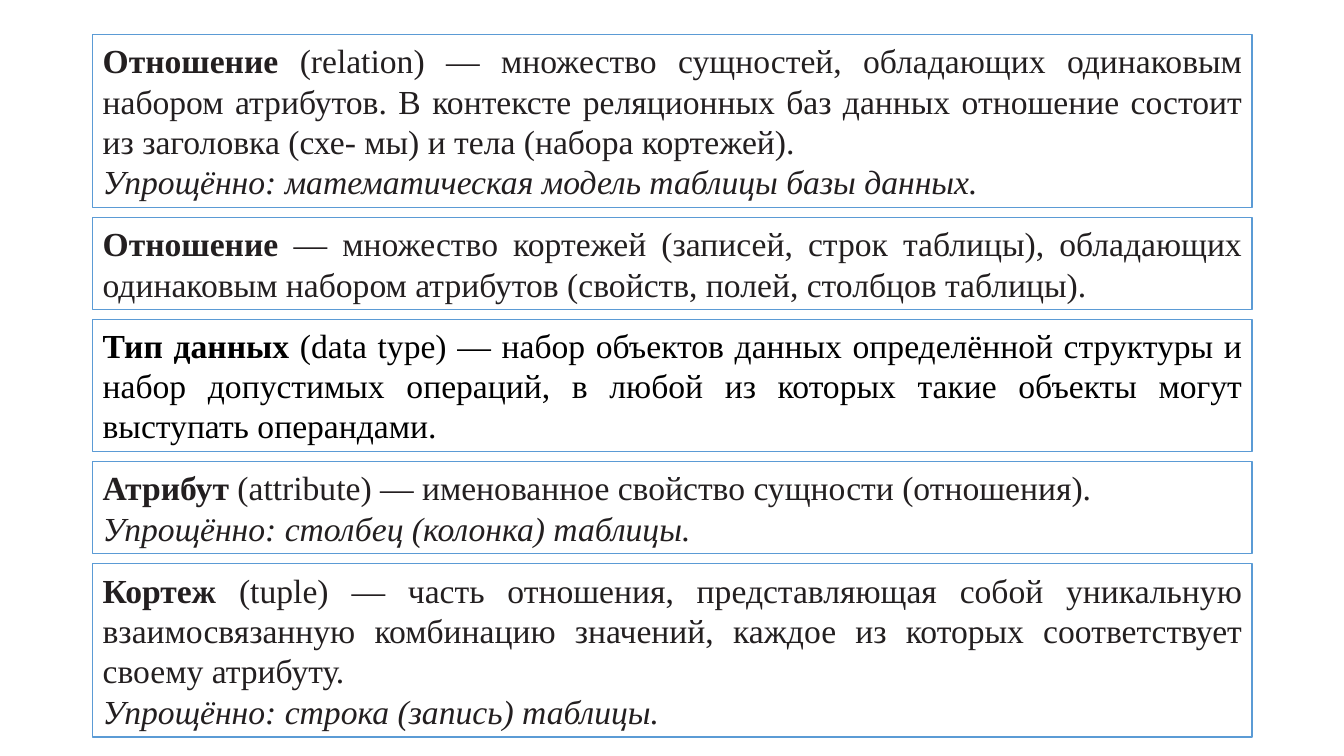
from pptx import Presentation
from pptx.dml.color import RGBColor
from pptx.enum.shapes import MSO_SHAPE as SHAPE
from pptx.enum.text import MSO_ANCHOR as ANCHOR, MSO_AUTO_SIZE as AUTO_SIZE, PP_ALIGN as ALIGN
from pptx.util import Inches, Pt

LEFT, TOP, WIDTH, GAP = 0.92, 0.34, 11.5, 0.1
DARK, BLACK = "231F20", "000000"
# Box height by number of text lines
HEIGHTS = {2: 0.91, 3: 1.31, 4: 1.72}

# Term, definition, simplified wording, text lines, colour, anchor
DEFINITIONS = [
    ("Отношение ",
     "(relation) — множество сущностей, обладающих одинаковым набором атрибутов. "
     "В контексте реляционных баз данных отношение состоит из заголовка (схе- мы) "
     "и тела (набора кортежей).",
     "Упрощённо: математическая модель таблицы базы данных.", 4, DARK, ANCHOR.MIDDLE),
    ("Отношение ",
     "— множество кортежей (записей, строк таблицы), обладающих одинаковым набором "
     "атрибутов (свойств, полей, столбцов таблицы).",
     None, 2, DARK, ANCHOR.MIDDLE),
    ("Тип данных ",
     "(data type) — набор объектов данных определённой структуры и набор допустимых "
     "операций, в любой из которых такие объекты могут выступать операндами.",
     None, 3, BLACK, ANCHOR.TOP),
    ("Атрибут ",
     "(attribute) — именованное свойство сущности (отношения).",
     "Упрощённо: столбец (колонка) таблицы.", 2, DARK, ANCHOR.MIDDLE),
    ("Кортеж ",
     "(tuple) — часть отношения, представляющая собой уникальную взаимосвязанную "
     "комбинацию значений, каждое из которых соответствует своему атрибуту.",
     "Упрощённо: строка (запись) таблицы.", 4, DARK, ANCHOR.MIDDLE),
]


def rgb(value):
    return RGBColor.from_string(value)


class DefinitionSlide:
    font, size, fill, border = "Times New Roman", 24, "FFFFFF", "5B9BD5"

    def __init__(self, prs):
        self.slide = prs.slides.add_slide(prs.slide_layouts[6])

    def box(self, top, height, anchor):
        """Add an empty bordered box and return its text frame."""
        sp = self.slide.shapes.add_shape(
            SHAPE.RECTANGLE, Inches(LEFT), Inches(top), Inches(WIDTH), Inches(height))
        sp.shadow.inherit = False
        sp.fill.solid()
        sp.fill.fore_color.rgb = rgb(self.fill)
        sp.line.color.rgb = rgb(self.border)
        sp.line.width = Pt(1)
        tf = sp.text_frame
        tf.word_wrap = True
        tf.auto_size = AUTO_SIZE.SHAPE_TO_FIT_TEXT
        tf.vertical_anchor = anchor
        return tf

    def paragraph(self, p, color, text, term=None, italic=False):
        p.alignment = ALIGN.JUSTIFY
        p.font.name = self.font
        p.font.size = Pt(self.size)
        p.font.color.rgb = rgb(color)
        p.font.italic = italic
        if term:
            r = p.add_run()
            r.text = term
            r.font.bold = True
        p.add_run().text = text

    def definition(self, top, height, term, text, simplified, color, anchor):
        tf = self.box(top, height, anchor)
        self.paragraph(tf.paragraphs[0], color, text, term=term)
        if simplified:
            self.paragraph(tf.add_paragraph(), color, simplified, italic=True)


def main():
    prs = Presentation()
    prs.slide_width, prs.slide_height = Inches(13.33), Inches(7.5)
    s = DefinitionSlide(prs)
    top = TOP
    for term, text, simplified, lines, color, anchor in DEFINITIONS:
        height = HEIGHTS[lines]
        s.definition(top, height, term, text, simplified, color, anchor)
        top += height + GAP
    prs.save("out.pptx")


if __name__ == "__main__":
    main()
